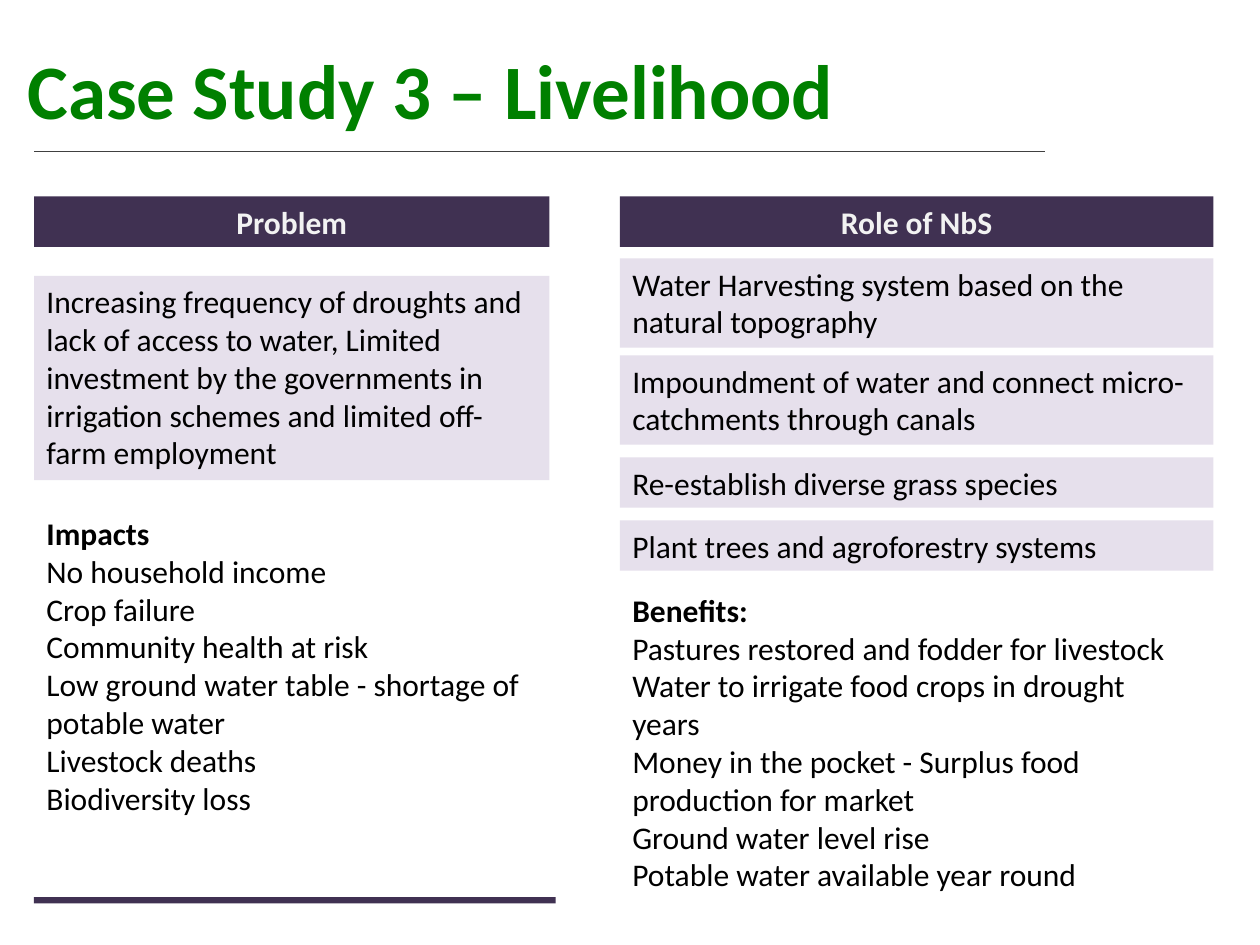
from dataclasses import dataclass

from pptx import Presentation
from pptx.dml.color import RGBColor
from pptx.enum.shapes import MSO_CONNECTOR, MSO_SHAPE
from pptx.enum.text import MSO_ANCHOR, PP_ALIGN
from pptx.oxml.ns import qn
from pptx.slide import Slide
from pptx.util import Inches, Pt
from lxml import etree

PURPLE, LILAC, WHITE = "403152", "E6E0EC", "FFFFFF"
BLACK, PALE, GREEN, GRAY = "000000", "F2F2F2", "008000", "404040"
LEFT, LEFT_WIDTH = 0.27, 4.09
RIGHT, RIGHT_WIDTH = 4.92, 4.71
HEADER_TOP, ONE_LINE, TWO_LINES = 1.56, 0.4, 0.71


@dataclass
class Panel:
    left: float
    top: float
    width: float
    height: float
    lines: tuple[str, ...] = ()
    fill: str | None = LILAC
    color: str = BLACK
    size: int = 18
    bold_first: bool = False
    align: PP_ALIGN = PP_ALIGN.LEFT
    anchor: MSO_ANCHOR = MSO_ANCHOR.TOP


def rgb(value: str) -> RGBColor:
    return RGBColor.from_string(value)


def draw_panel(slide: Slide, panel: Panel) -> None:
    bounds = [Inches(n) for n in (panel.left, panel.top, panel.width, panel.height)]
    if panel.fill is None:
        box = slide.shapes.add_textbox(*bounds)
    else:
        box = slide.shapes.add_shape(MSO_SHAPE.RECTANGLE, *bounds)
        box.shadow.inherit = False
        box.fill.solid()
        box.fill.fore_color.rgb = rgb(panel.fill)
        box.line.fill.background()
    frame = box.text_frame
    frame.word_wrap = True
    frame.vertical_anchor = panel.anchor
    for index, line in enumerate(panel.lines):
        paragraph = frame.add_paragraph() if index else frame.paragraphs[0]
        paragraph.alignment = panel.align
        run = paragraph.add_run()
        run.text = line
        run.font.name = "Calibri"
        run.font.size = Pt(panel.size)
        run.font.bold = panel.bold_first and index == 0
        run.font.color.rgb = rgb(panel.color)


def draw_rule(slide: Slide, left: float, right: float, y: float) -> None:
    rule = slide.shapes.add_connector(
        MSO_CONNECTOR.STRAIGHT, Inches(right), Inches(y), Inches(left), Inches(y)
    )
    rule.line.color.rgb = rgb(GRAY)
    rule.line.width = Pt(0.5)
    etree.SubElement(rule._element.spPr, qn("a:effectLst"))


def header(left: float, width: float, label: str) -> Panel:
    return Panel(left, HEADER_TOP, width, ONE_LINE, (label,), PURPLE, PALE,
                 bold_first=True, align=PP_ALIGN.CENTER)


def measure(top: float, height: float, text: str) -> Panel:
    return Panel(RIGHT, top, RIGHT_WIDTH, height, (text,))


TITLE = Panel(0.12, 0.08, 9, 1.25, ("Case Study 3 – Livelihood",), None, GREEN,
              44, bold_first=True, anchor=MSO_ANCHOR.MIDDLE)

IMPACTS = (
    "Impacts",
    "No household income",
    "Crop failure",
    "Community health at risk",
    "Low ground water table - shortage of potable water",
    "Livestock deaths",
    "Biodiversity loss",
)

BENEFITS = (
    "Benefits:",
    "Pastures restored and fodder for livestock",
    "Water to irrigate food crops in drought years",
    "Money in the pocket - Surplus food production for market",
    "Ground water level rise",
    "Potable water available year round",
)

PROBLEM = (
    "Increasing frequency of droughts and lack of access to water, Limited "
    "investment by the governments in irrigation schemes and limited "
    "off-farm employment"
)

PANELS = (
    TITLE,
    header(LEFT, LEFT_WIDTH, "Problem"),
    Panel(LEFT, 4.03, LEFT_WIDTH, 2.52, IMPACTS, None, bold_first=True),
    Panel(RIGHT, 4.64, 4.61, 2.52, BENEFITS, WHITE, bold_first=True),
    header(RIGHT, RIGHT_WIDTH, "Role of NbS"),
    Panel(LEFT, 2.19, LEFT_WIDTH, 1.62, (PROBLEM,)),
    measure(2.05, TWO_LINES, "Water Harvesting system based on the natural topography"),
    measure(2.82, TWO_LINES,
            "Impoundment of water and connect micro-catchments through canals"),
    measure(3.63, ONE_LINE, "Re-establish diverse grass species"),
    measure(4.13, ONE_LINE, "Plant trees and agroforestry systems"),
    Panel(LEFT, 7.12, 4.14, 0.05, fill=PURPLE),
)


def main() -> None:
    deck = Presentation()
    deck.slide_width, deck.slide_height = Inches(10), Inches(7.5)
    slide = deck.slides.add_slide(deck.slide_layouts[6])
    for panel in PANELS:
        draw_panel(slide, panel)
    draw_rule(slide, LEFT, 8.29, 1.2)
    deck.save("out.pptx")


if __name__ == "__main__":
    main()
